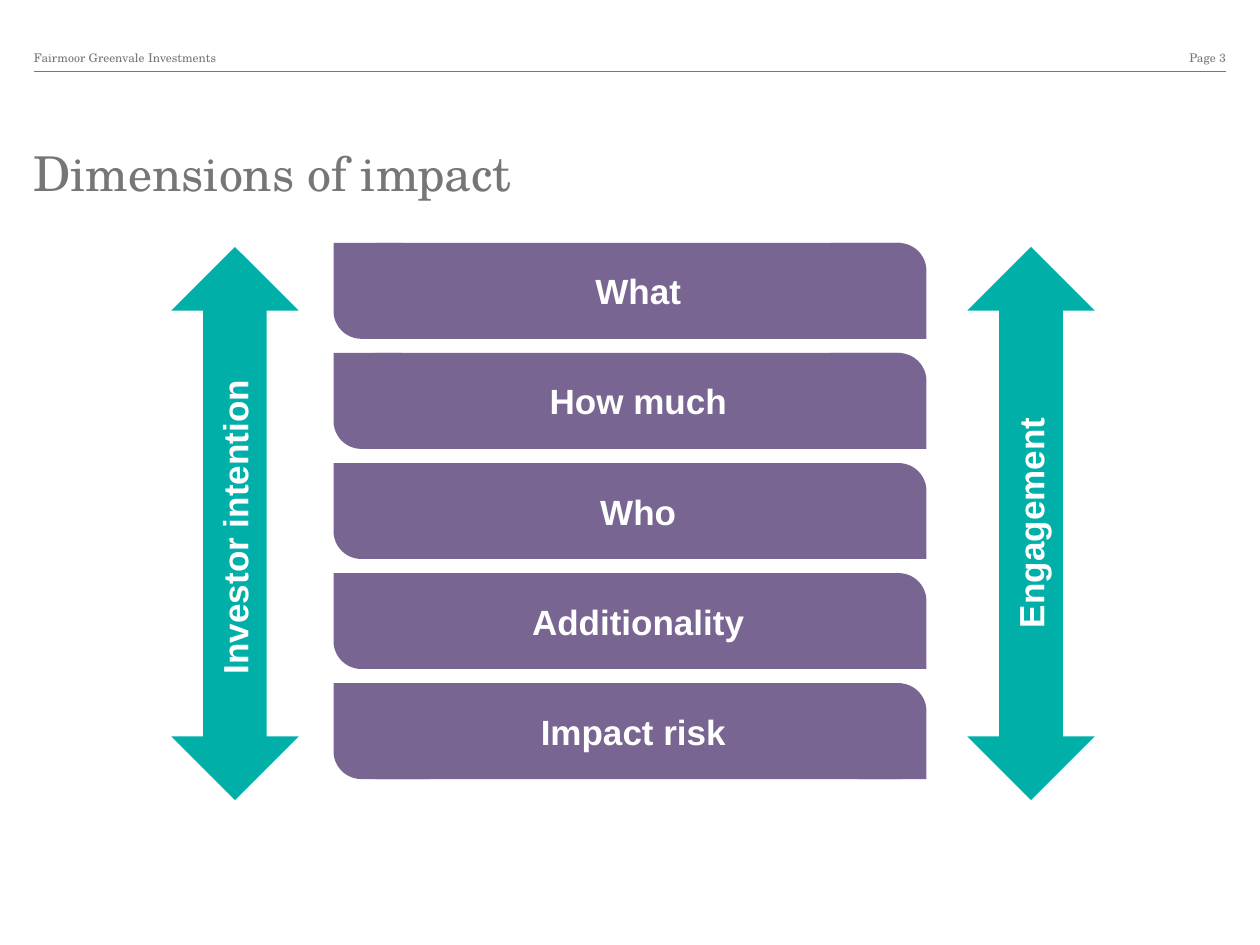
from lxml import etree
from pptx import Presentation
from pptx.dml.color import RGBColor
from pptx.enum.shapes import MSO_CONNECTOR, MSO_SHAPE
from pptx.enum.text import MSO_ANCHOR, MSO_AUTO_SIZE, PP_ALIGN
from pptx.oxml.ns import qn
from pptx.util import Pt

GREY = RGBColor(0x74, 0x76, 0x78)
TEAL = RGBColor(0x00, 0xB0, 0xA8)
PLUM = RGBColor(0x78, 0x65, 0x92)
WHITE = RGBColor(0xFF, 0xFF, 0xFF)
SERIF = "TeX Gyre Schola"
SANS = "Arial"
LEFT, MID, RIGHT = PP_ALIGN.LEFT, PP_ALIGN.CENTER, PP_ALIGN.RIGHT
TOP, CENTRE = MSO_ANCHOR.TOP, MSO_ANCHOR.MIDDLE
FIXED = MSO_AUTO_SIZE.NONE
ARROW = MSO_SHAPE.UP_DOWN_ARROW
LEAF = MSO_SHAPE.ROUND_2_DIAG_RECTANGLE
BLOCK = MSO_SHAPE.RECTANGLE
STRAIGHT = MSO_CONNECTOR.STRAIGHT
DIMS = ["What", "How much", "Who", "Additionality", "Impact risk "]


def write(shape, text, size, font, color, align=LEFT, anchor=TOP, bold=False):
    """Fill a shape with one styled run and no insets."""
    frame = shape.text_frame
    frame.word_wrap = True
    frame.auto_size = FIXED
    frame.vertical_anchor = anchor
    frame.margin_left = frame.margin_right = 0
    frame.margin_top = frame.margin_bottom = 0
    para = frame.paragraphs[0]
    para.alignment = align
    run = para.add_run()
    run.text = text
    run.font.size = Pt(size)
    run.font.name = font
    run.font.bold = bold
    run.font.color.rgb = color


def add_box(slide, x, y, w, h):
    """Add a text box with its place in points."""
    return slide.shapes.add_textbox(Pt(x), Pt(y), Pt(w), Pt(h))


def add_solid(slide, kind, x, y, w, h, color):
    """Add a plain filled preset shape."""
    shape = slide.shapes.add_shape(kind, Pt(x), Pt(y), Pt(w), Pt(h))
    shape.shadow.inherit = False
    shape.fill.solid()
    shape.fill.fore_color.rgb = color
    shape.line.fill.background()
    return shape


def add_header(slide, x, y, w, h):
    """Place the firm name and page number above a thin rule."""
    page = 43.2
    firm = add_box(slide, x, y, w - 2 * page, 8.64)
    write(firm, "Fairmoor Greenvale Investments", 6.8, SERIF, GREY, LEFT, CENTRE)
    label = add_box(slide, x + w - page, y, page, 8.64)
    write(label, "Page 3", 6.8, SERIF, GREY, RIGHT, CENTRE)
    rule = slide.shapes.add_connector(
        STRAIGHT, Pt(x), Pt(y + h), Pt(x + w), Pt(y + h))
    rule.line.color.rgb = GREY
    rule.line.width = Pt(0.25)
    etree.SubElement(rule._element.spPr, qn("a:effectLst"))


def add_title(slide, x, y, w, h):
    """Move the title placeholder and give it its text."""
    title = slide.shapes.title
    title.left, title.top, title.width, title.height = Pt(x), Pt(y), Pt(w), Pt(h)
    write(title, "Dimensions of impact", 27.4, SERIF, GREY)


def add_arrow(slide, x, y, w, h, text, drop, span):
    """Draw a double arrow with a label that reads upwards."""
    add_solid(slide, ARROW, x, y, w, h, TEAL)
    label = add_box(slide, x + w / 3 - 0.3, y + drop, w / 3, span)
    write(label, text, 20, SANS, WHITE, MID, TOP, True)
    label.text_frame._txBody.bodyPr.set("vert", "vert270")


def add_bar(slide, x, y, w, h, name):
    """Draw a bar as a labelled block between two leaf-shaped ends."""
    for left in (x, x + w - h):
        leaf = add_solid(slide, LEAF, left, y, h, h, PLUM)
        leaf.adjustments[0] = 0
        leaf.adjustments[1] = 0.29
    block = add_solid(slide, BLOCK, x + 23.6, y, 300.96, h, PLUM)
    write(block, name, 20, SANS, WHITE, MID, CENTRE, True)


def add_bars(slide, x, y, w, h, names):
    """Stack bars of equal height at equal gaps."""
    tall = 54.8
    step = (h - tall) / (len(names) - 1)
    for i, name in enumerate(names):
        add_bar(slide, x, y + i * step, w, tall, name)


def main():
    """Build and save the slide."""
    deck = Presentation()
    deck.slide_width, deck.slide_height = Pt(720), Pt(540)
    slide = deck.slides.add_slide(deck.slide_layouts[5])
    add_header(slide, 19.44, 28.8, 681.12, 12)
    add_title(slide, 19.2, 82.08, 681.12, 36)
    add_arrow(slide, 97.92, 141.12, 72.72, 316.08, "Investor intention", 63.6, 192.96)
    add_bars(slide, 190.6, 138.8, 338.8, 306.4, DIMS)
    add_arrow(slide, 552.8, 141.12, 72.72, 316.08, "Engagement", 91, 133.2)
    deck.save("out.pptx")


if __name__ == "__main__":
    main()
